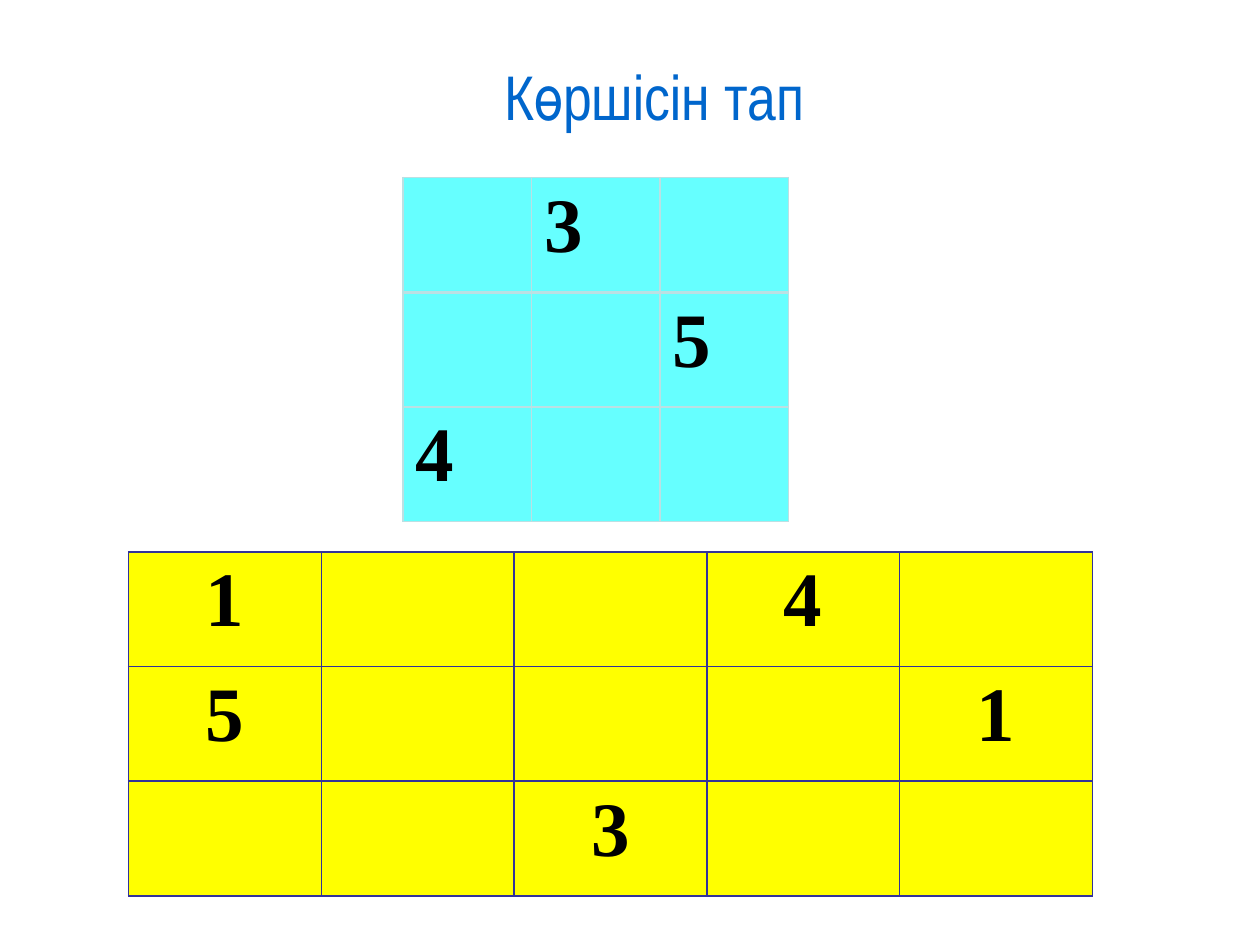
from lxml import etree
from pptx import Presentation
from pptx.dml.color import RGBColor
from pptx.enum import text
from pptx.oxml import ns
from pptx.util import Inches, Pt

BLUE = RGBColor(0x00, 0x66, 0xCC)
BLACK = RGBColor(0x00, 0x00, 0x00)
CYAN = RGBColor(0x66, 0xFF, 0xFF)
PALE_TEAL = RGBColor(0xBB, 0xE0, 0xE3)
YELLOW = RGBColor(0xFF, 0xFF, 0x00)
INDIGO = RGBColor(0x33, 0x33, 0x99)


def add_border(cell, side, color, width):
    """Draw one cell edge; side is L, R, T or B, added in that order."""
    properties = cell._tc.get_or_add_tcPr()
    line = etree.SubElement(properties, ns.qn(f"a:ln{side}"), w=str(Pt(width)))
    fill = etree.SubElement(line, ns.qn("a:solidFill"))
    etree.SubElement(fill, ns.qn("a:srgbClr"), val=str(color))


presentation = Presentation()
presentation.slide_width = Inches(10)
presentation.slide_height = Inches(7.5)
slide = presentation.slides.add_slide(presentation.slide_layouts[5])

title = slide.shapes.title
title.left, title.top = Inches(2.24), Inches(0.36)
title.width, title.height = Inches(5.91), Inches(0.62)
frame = title.text_frame
frame.auto_size = text.MSO_AUTO_SIZE.NONE
frame.word_wrap = False
frame.vertical_anchor = text.MSO_ANCHOR.TOP
frame.margin_top = Inches(0.1)
frame.margin_bottom = 0
paragraph = frame.paragraphs[0]
paragraph.alignment = text.PP_ALIGN.CENTER
run = paragraph.add_run()
run.text = "Көршісін тап"
run.font.name = "Arial Narrow"
run.font.size = Pt(36)
run.font.color.rgb = BLUE

small_grid = [
    ["", "3", ""],
    ["", "", "5"],
    ["4", "", ""],
]
large_grid = [
    ["1", "", "", "4", ""],
    ["5", "", "", "", "1"],
    ["", "", "3", "", ""],
]
# numbers, left, top, column width, fill, border, first rule width, alignment
tables = [
    (small_grid, 3.2, 1.41, 1.02, CYAN, PALE_TEAL, 2, text.PP_ALIGN.LEFT),
    (large_grid, 1.02, 4.38, 1.53, YELLOW, INDIGO, 1, text.PP_ALIGN.CENTER),
]
ROW_HEIGHT = 0.91

for numbers, left, top, column_width, fill, border, first_rule, alignment in tables:
    row_count, column_count = len(numbers), len(numbers[0])
    table = slide.shapes.add_table(
        row_count, column_count, Inches(left), Inches(top),
        Inches(column_width * column_count), Inches(ROW_HEIGHT * row_count),
    ).table
    table.first_row = False
    table.horz_banding = False
    for row_index, row in enumerate(numbers):
        for column_index, number in enumerate(row):
            cell = table.cell(row_index, column_index)
            widths = {"L": 1, "R": 1, "T": 1, "B": 1}
            if row_index == 0:
                widths["B"] = first_rule
            elif row_index == 1:
                widths["T"] = first_rule
            for side, width in widths.items():
                add_border(cell, side, border, width)
            cell.fill.solid()
            cell.fill.fore_color.rgb = fill
            if number:
                paragraph = cell.text_frame.paragraphs[0]
                paragraph.alignment = alignment
                run = paragraph.add_run()
                run.text = number
                run.font.name = "Times New Roman"
                run.font.size = Pt(44)
                run.font.bold = True
                run.font.color.rgb = BLACK

presentation.save("out.pptx")
